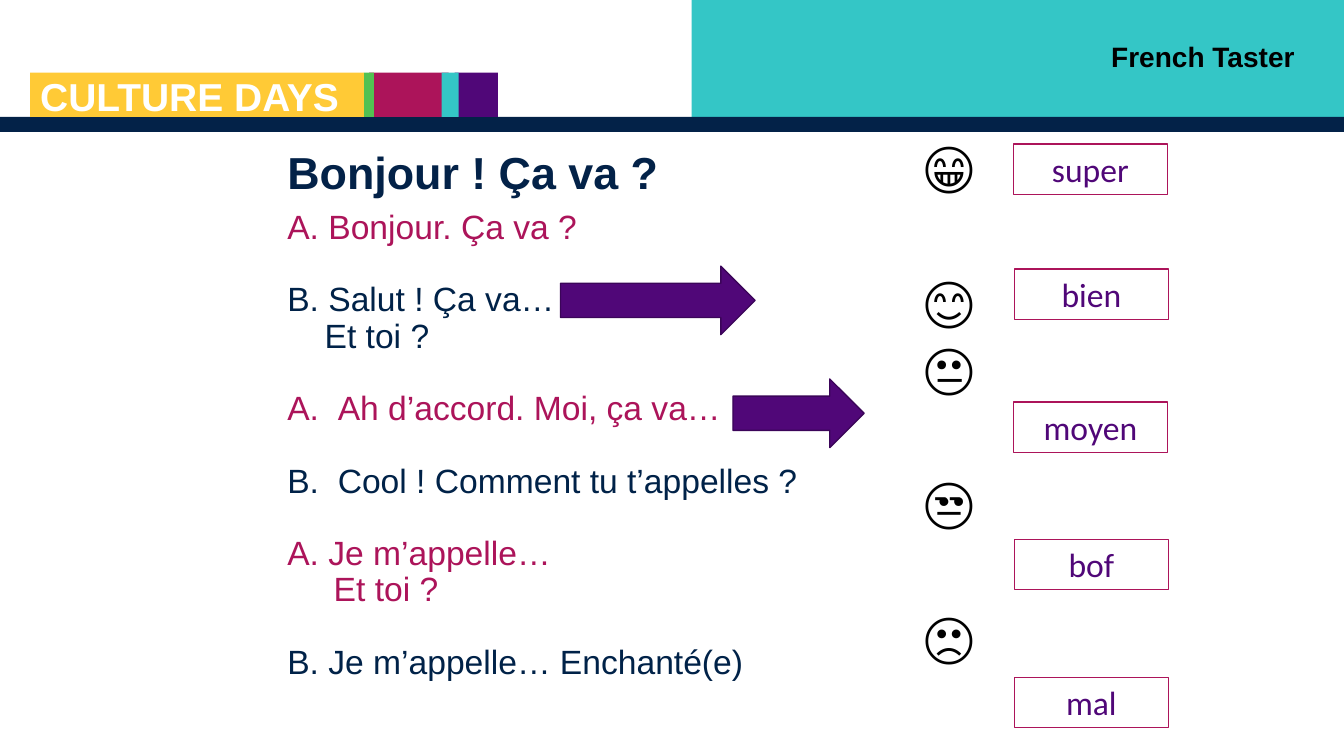
from dataclasses import dataclass

from lxml.etree import SubElement
from pptx import Presentation
from pptx.dml.color import RGBColor as Rgb
from pptx.enum.shapes import MSO_SHAPE as Shape
from pptx.enum.text import MSO_ANCHOR as Anchor, MSO_AUTO_SIZE as AutoSize, PP_ALIGN as Align
from pptx.oxml.ns import qn
from pptx.util import Inches, Pt


@dataclass(frozen=True)
class Theme:
    teal: str = "34C6C6"
    navy: str = "032248"
    ink: str = "002248"
    purple: str = "500778"
    purple_edge: str = "3B0559"
    crimson: str = "AC145A"
    green: str = "52C152"
    yellow: str = "FFCA36"
    white: str = "FFFFFF"
    black: str = "000000"
    heading: str = "Arial"
    label: str = "Calibri"
    title_size: float = 32
    body_size: float = 24
    brand_size: float = 27.8
    header_size: float = 20
    face_size: float = 40


theme = Theme()


def add_block(kind, left, top, width, height, fill, edge=None):
    block = page.shapes.add_shape(kind, Inches(left), Inches(top), Inches(width), Inches(height))
    block.shadow.inherit = False
    block.fill.solid()
    block.fill.fore_color.rgb = Rgb.from_string(fill)
    if edge:
        block.line.color.rgb = Rgb.from_string(edge)
        block.line.width = Pt(1)
    else:
        block.line.fill.background()
    return block


def style(para, text, size, color, font=theme.heading, bold=False, align=Align.LEFT):
    para.text = text
    para.alignment = align
    para.font.size = Pt(size)
    para.font.name = font
    para.font.bold = bold
    para.font.color.rgb = Rgb.from_string(color)


deck = Presentation()
deck.slide_width, deck.slide_height = Inches(13.33), Inches(7.5)
page = deck.slides.add_slide(deck.slide_layouts[0])

# Header bands and brand strip
for left, top, width, height, fill in [
    (6.86, 0, 6.47, 1.16, theme.teal),
    (0, 1.16, 13.33, 0.15, theme.navy),
    (4.51, 0.72, 0.43, 0.44, theme.purple),
    (3.66, 0.72, 0.79, 0.44, theme.crimson),
    (4.38, 0.72, 0.17, 0.44, theme.teal),
    (3.61, 0.72, 0.1, 0.44, theme.green),
    (0.3, 0.72, 3.31, 0.44, theme.yellow),
]:
    add_block(Shape.RECTANGLE, left, top, width, height, fill)

# Header texts
brand = page.shapes.add_textbox(Inches(0.3), Inches(0.75), Inches(4.15), Inches(0.48))
brand.text_frame.word_wrap = True
para = brand.text_frame.paragraphs[0]
para.line_spacing = Pt(27.6)
style(para, "CULTURE DAYS", theme.brand_size, theme.white, bold=True)

header = page.shapes.add_textbox(Inches(7.61), Inches(0.34), Inches(5.33), Inches(0.44))
header.text_frame.word_wrap = True
style(header.text_frame.paragraphs[0], "French Taster", theme.header_size, theme.black,
      bold=True, align=Align.RIGHT)

# Title and dialogue placeholders
title, dialogue = page.placeholders
for holder, top, height in [(title, 1.44, 0.8), (dialogue, 2.03, 4.89)]:
    holder.left, holder.top = Inches(2.75), Inches(top)
    holder.width, holder.height = Inches(10), Inches(height)
    holder.text_frame.word_wrap = True
    holder.text_frame.auto_size = AutoSize.NONE
    holder.text_frame.vertical_anchor = Anchor.TOP

para = title.text_frame.paragraphs[0]
para.line_spacing = Pt(34.5)
style(para, "Bonjour ! Ça va ?", theme.title_size, theme.navy, bold=True)

# Dialogue: text, colour, left margin, lettered start, starts a new turn
line_height = Pt(25.9)
lines = [
    ("A. Bonjour. Ça va ?", theme.crimson, 0, None, False),
    ("B. Salut ! Ça va…", theme.ink, 0, None, True),
    ("Et toi ?", theme.ink, 0.37, None, False),
    ("Ah d’accord. Moi, ça va…", theme.crimson, 0.5, 1, True),
    ("Cool ! Comment tu t’appelles ?", theme.ink, 0.5, 2, True),
    ("A. Je m’appelle…", theme.crimson, 0, None, True),
    ("Et toi ?", theme.crimson, 0.46, None, False),
    ("B. Je m’appelle… Enchanté(e)", theme.ink, 0, None, True),
]
for index, (text, color, margin, letter, new_turn) in enumerate(lines):
    frame = dialogue.text_frame
    para = frame.add_paragraph() if index else frame.paragraphs[0]
    para.line_spacing = line_height
    para.space_before = line_height if new_turn else Pt(0)
    props = para._p.get_or_add_pPr()
    props.set("marL", str(Inches(margin)))
    props.set("indent", str(Inches(-margin if letter else 0)))
    if letter:
        SubElement(props, qn("a:buFont"), typeface=theme.heading)
        SubElement(props, qn("a:buAutoNum"), type="alphaUcPeriod", startAt=str(letter))
    else:
        SubElement(props, qn("a:buNone"))
    style(para, text, theme.body_size, color)

# Column of faces, some one row apart
faces = page.shapes.add_textbox(Inches(9.06), Inches(1.25), Inches(1.07), Inches(6.1))
faces.text_frame.word_wrap = True
for index, (face, gap) in enumerate([("😁", 0), ("😊", 48), ("😐", 0), ("😒", 48), ("🙁", 48)]):
    frame = faces.text_frame
    para = frame.add_paragraph() if index else frame.paragraphs[0]
    para.space_before = Pt(gap)
    style(para, face, theme.face_size, theme.black, theme.label)

# Answer boxes
for word, left, top in [("super", 10.05, 1.43), ("bien", 10.06, 2.67), ("moyen", 10.05, 3.99),
                        ("bof", 10.06, 5.35), ("mal", 10.06, 6.72)]:
    answer = add_block(Shape.RECTANGLE, left, top, 1.53, 0.5, theme.white, theme.crimson)
    answer.text_frame.vertical_anchor = Anchor.MIDDLE
    style(answer.text_frame.paragraphs[0], word, theme.body_size, theme.purple,
          theme.label, align=Align.CENTER)

# Arrows towards the answers
for left, top, width in [(5.56, 2.64, 1.93), (7.27, 3.76, 1.3)]:
    add_block(Shape.RIGHT_ARROW, left, top, width, 0.68, theme.purple, theme.purple_edge)

deck.save("out.pptx")
